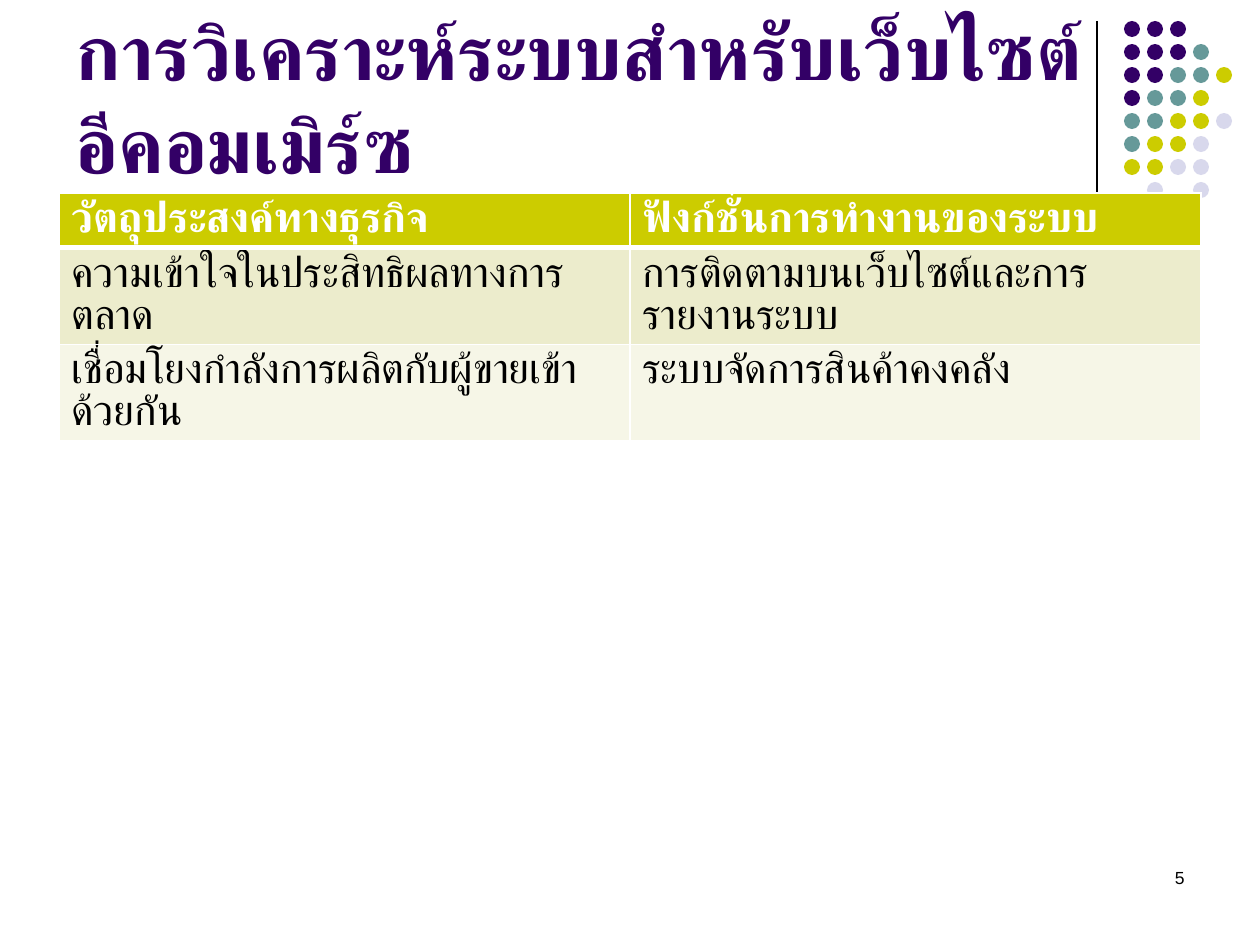
from lxml.etree import SubElement
from pptx import Presentation
from pptx.dml.color import RGBColor
from pptx.enum.shapes import MSO_CONNECTOR as CONN, MSO_SHAPE as SHAPE
from pptx.enum.text import MSO_ANCHOR as ANCHOR, PP_ALIGN as ALIGN
from pptx.oxml.ns import qn
from pptx.util import Emu, Pt

SCALE = 914400 / 126
FONT = "Arial"
BLACK = RGBColor(0x00, 0x00, 0x00)
WHITE = RGBColor(0xFF, 0xFF, 0xFF)
PURPLE = RGBColor(0x33, 0x00, 0x66)
TEAL = RGBColor(0x66, 0x99, 0x99)
LIME = RGBColor(0xCC, 0xCC, 0x00)
LAVENDER = RGBColor(0xD8, 0xD8, 0xEC)
BAND_DARK = RGBColor(0xEC, 0xEC, 0xCC)
BAND_LIGHT = RGBColor(0xF6, 0xF6, 0xE7)

DOT_COLORS = {"P": PURPLE, "T": TEAL, "L": LIME, "V": LAVENDER}
DOT_ROWS = ["PPP", "PPPT", "PPTTL", "PTTL", "TTLLV", "TLLV", "LLVV", " V V"]
TITLE = "การวิเคราะห์ระบบสำหรับเว็บไซต์อีคอมเมิร์ซ"
TABLE_ROWS = [
    ("วัตถุประสงค์ทางธุรกิจ", "ฟังก์ชั่นการทำงานของระบบ"),
    ("ความเข้าใจในประสิทธิผลทางการตลาด", "การติดตามบนเว็บไซต์และการรายงานระบบ"),
    ("เชื่อมโยงกำลังการผลิตกับผู้ขายเข้าด้วยกัน", "ระบบจัดการสินค้าคงคลัง"),
]
ROW_FILLS = [LIME, BAND_DARK, BAND_LIGHT]


def px(n):
    """Turn pixels into EMU."""
    return Emu(round(n * SCALE))


def box(*lengths):
    """Turn a run of pixel lengths into EMU."""
    return [px(n) for n in lengths]


def set_text(tf, text, size, color, bold=False, align=ALIGN.LEFT):
    """Write one formatted paragraph and return it."""
    tf.text = text
    tf.word_wrap = True
    p = tf.paragraphs[0]
    p.alignment = align
    for r in p.runs:
        r.font.name = FONT
        r.font.size = Pt(size)
        r.font.bold = bold
        r.font.color.rgb = color
        SubElement(r.font._element, qn("a:cs"), typeface=FONT)
    return p


def add_title(slide):
    """Fill and place the title placeholder."""
    sp = slide.shapes.title
    sp.left, sp.top, sp.width, sp.height = box(63, 16, 1040, 179)
    set_text(sp.text_frame, TITLE, 44, PURPLE, bold=True)
    sp.text_frame.vertical_anchor = ANCHOR.BOTTOM


def add_rule(slide):
    """Draw the vertical rule beside the title."""
    line = slide.shapes.add_connector(CONN.STRAIGHT, *box(1097, 21, 1097, 231))
    line.line.color.rgb = BLACK
    line.line.width = Pt(0.75)
    SubElement(line._element.spPr, qn("a:effectLst"))


def add_dots(slide, left=1124, top=21, pitch=23, size=16):
    """Draw the grouped grid of coloured dots."""
    group = slide.shapes.add_group_shape()
    for row, codes in enumerate(DOT_ROWS):
        for col, code in enumerate(codes):
            if code in DOT_COLORS:
                place = box(left + col * pitch, top + row * pitch, size, size)
                sp = group.shapes.add_shape(SHAPE.OVAL, *place)
                sp.shadow.inherit = False
                sp.fill.solid()
                sp.fill.fore_color.rgb = DOT_COLORS[code]
                sp.line.fill.background()


def add_borders(cell, bottom):
    """Give a cell white borders, with its own bottom width."""
    tc_pr = cell._tc.get_or_add_tcPr()
    widths = {"a:lnL": 1, "a:lnR": 1, "a:lnT": 1, "a:lnB": bottom}
    for i, (tag, width) in enumerate(widths.items()):
        ln = SubElement(tc_pr, qn(tag), w=str(Pt(width)))
        fill = SubElement(ln, qn("a:solidFill"))
        SubElement(fill, qn("a:srgbClr"), val=str(WHITE))
        tc_pr.insert(i, ln)


def add_objectives_table(slide):
    """Add the table of business objectives and system functions."""
    place = box(59, 193, 1142, 156)
    table = slide.shapes.add_table(len(TABLE_ROWS), 2, *place).table
    for i, (texts, fill) in enumerate(zip(TABLE_ROWS, ROW_FILLS)):
        header = i == 0
        for j, text in enumerate(texts):
            cell = table.cell(i, j)
            color = WHITE if header else BLACK
            p = set_text(cell.text_frame, text, 24, color, bold=header)
            p.line_spacing = Pt(24)
            cell.fill.solid()
            cell.fill.fore_color.rgb = fill
            add_borders(cell, 3 if header else 1)


def add_page_number(slide):
    """Write the page number at the lower right."""
    sp = slide.shapes.add_textbox(*box(903, 861, 294, 63))
    set_text(sp.text_frame, "5", 10, BLACK, align=ALIGN.RIGHT)


def main():
    """Build and save the slide."""
    prs = Presentation()
    prs.slide_width, prs.slide_height = box(1260, 945)
    slide = prs.slides.add_slide(prs.slide_layouts[5])
    add_title(slide)
    add_rule(slide)
    add_dots(slide)
    add_page_number(slide)
    add_objectives_table(slide)
    prs.save("out.pptx")


if __name__ == "__main__":
    main()
